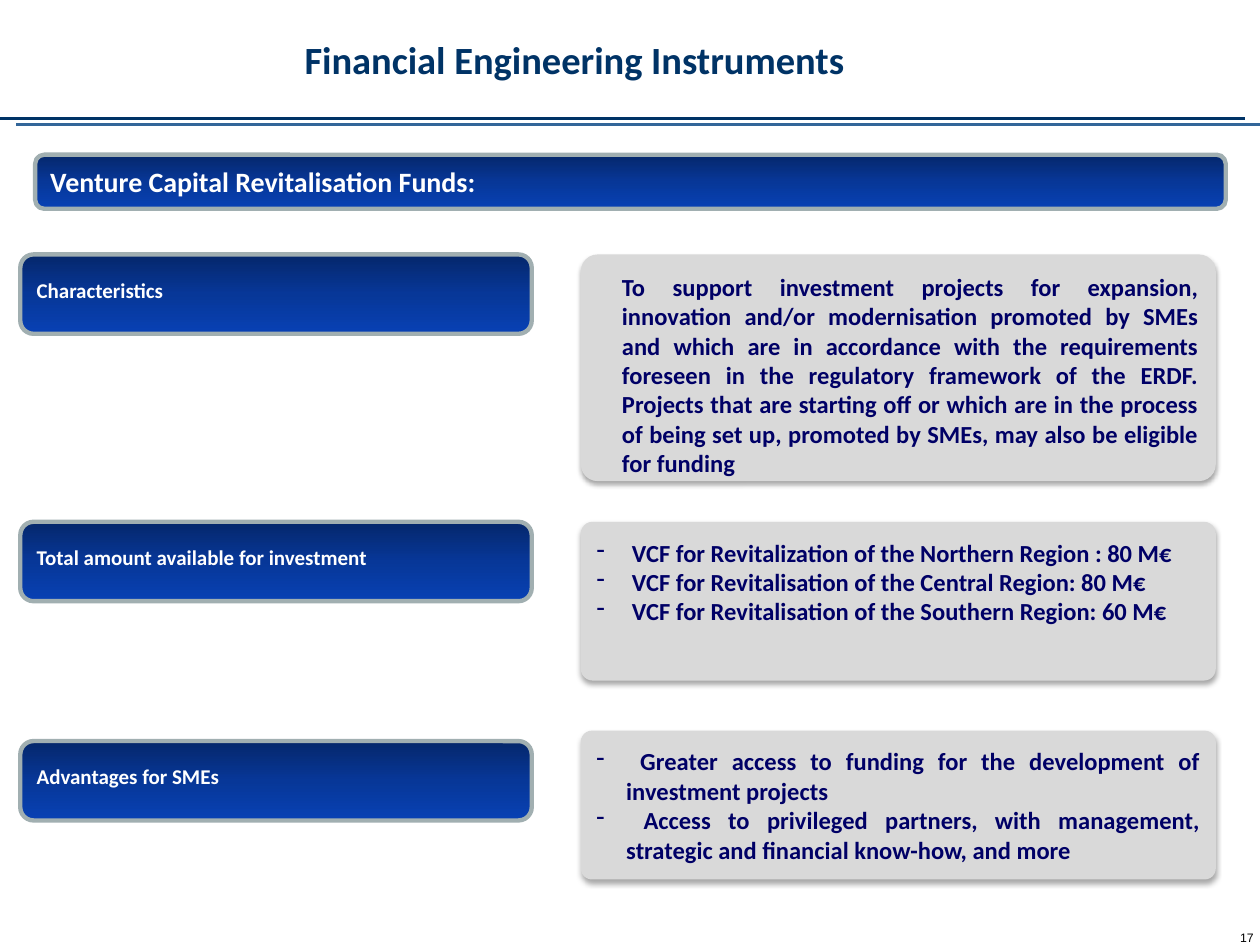
from copy import deepcopy

from lxml.etree import SubElement
from pptx import Presentation
from pptx.dml.color import RGBColor
from pptx.enum.shapes import MSO_CONNECTOR, MSO_SHAPE
from pptx.enum.text import MSO_ANCHOR, PP_ALIGN
from pptx.oxml.ns import qn
from pptx.util import Cm, Pt

NAVY, INK, WHITE = "003366", "000066", "FFFFFF"
BLUES = ["05276B", "073798", "0841B4"]
LEFT, LABEL_W, LABEL_H = 0.41, 10.31, 1.6
RIGHT, PANEL_W = 11.71, 12.8

# label, label top, panel top, panel height, bulleted, paragraphs of runs
ROWS = [
    ("Characteristics", 5.13, 5.13, 4.57, False, [[
        "To support investment projects for expansion, innovation and/or "
        "modernisation promoted by SMEs and which are in accordance with the "
        "requirements foreseen in the regulatory framework of the ERDF. "
        "Projects that are starting off or which are in the process of being "
        "set up, promoted by SMEs, may also be eligible for funding"]]),
    ("Total amount available for investment", 10.52, 10.52, 3.2, True, [
        [" VCF for Revitalization of the Northern Region", " ", ": 80 M€"],
        [" VCF for Revitalisation of the Central Region: 80 M€"],
        [" VCF for Revitalisation of the Southern Region: 60 M€"]]),
    ("Advantages for SMEs", 14.94, 14.73, 3.0, True, [
        [" Greater access to funding for the development of investment projects"],
        [" Access to privileged partners, with management, strategic and "
         "financial know-how, and more"]]),
]


def rgb(code):
    return RGBColor.from_string(code)


def style(run, size, color, bold=True, name="Calibri"):
    font = run.font
    font.size, font.bold, font.name = Pt(size), bold, name
    font.color.rgb = rgb(color)


def place(box):
    return [Cm(v) for v in box]


def add_text(slide, box, text, size, color, **look):
    shape = slide.shapes.add_textbox(*place(box))
    frame = shape.text_frame
    frame.word_wrap = True
    frame.text = text
    style(frame.paragraphs[0].runs[0], size, color, **look)
    return frame


def add_rule(slide, x, y, width, color):
    line = slide.shapes.add_connector(
        MSO_CONNECTOR.STRAIGHT, *place((x, y, x + width, y)))
    line.line.color.rgb = rgb(color)
    line.line.width = Pt(1.5)
    SubElement(line._element.spPr, qn("a:effectLst"))


def add_round(slide, box):
    shape = slide.shapes.add_shape(MSO_SHAPE.ROUNDED_RECTANGLE, *place(box))
    shape.shadow.inherit = False
    return shape


def add_blue(slide, box, text, size):
    """Rounded bar with a vertical blue gradient."""
    shape = add_round(slide, box)
    fill = shape.fill
    fill.gradient()
    fill.gradient_angle = 270
    stops = shape._element.spPr.find(qn("a:gradFill")).find(qn("a:gsLst"))
    stops.append(deepcopy(stops[-1]))
    for i, (stop, color) in enumerate(zip(fill.gradient_stops, BLUES)):
        stop.position = i / 2
        stop.color.rgb = rgb(color)
    shape.line.color.rgb = rgb("A1AFB1")
    shape.line.width = Pt(2.5)
    frame = shape.text_frame
    frame.text = text
    para = frame.paragraphs[0]
    para.alignment = PP_ALIGN.LEFT
    style(para.runs[0], size, WHITE)
    return frame


def add_label(slide, box, text):
    frame = add_blue(slide, box, text, 12)
    frame.vertical_anchor = MSO_ANCHOR.TOP
    frame.word_wrap = False
    para = frame.paragraphs[0]
    para.alignment = PP_ALIGN.JUSTIFY
    para.line_spacing = 1.5


def add_shadow(shape):
    effects = shape._element.spPr.find(qn("a:effectLst"))
    outer = SubElement(effects, qn("a:outerShdw"), blurRad=str(Pt(3.1)),
                       dist=str(Pt(1.8)), dir="5400000", rotWithShape="0")
    color = SubElement(outer, qn("a:srgbClr"), val="000000")
    SubElement(color, qn("a:alpha"), val="35000")


def indent(para, bulleted):
    props = para._p.get_or_add_pPr()
    props.set("marL", str(Cm(0.6 if bulleted else 0.48)))
    props.set("indent", str(Cm(-0.6 if bulleted else 0)))
    if bulleted:
        color = SubElement(props, qn("a:buClr"))
        SubElement(color, qn("a:srgbClr"), val=INK)
        SubElement(props, qn("a:buChar"), char="-")


def add_panel(slide, box, bulleted, paras):
    """Grey card with justified text."""
    shape = add_round(slide, box)
    shape.adjustments[0] = 0.074
    shape.fill.solid()
    shape.fill.fore_color.rgb = rgb("D9D9D9")
    shape.line.fill.background()
    add_shadow(shape)
    frame = shape.text_frame
    frame.vertical_anchor = MSO_ANCHOR.TOP
    frame.margin_left = frame.margin_right = Cm(0.25)
    frame.margin_top = frame.margin_bottom = Cm(0.25)
    frame.text = "\n".join("" for _ in paras)
    for para, parts in zip(frame.paragraphs, paras):
        para.alignment = PP_ALIGN.JUSTIFY
        indent(para, bulleted)
        for part in parts:
            run = para.add_run()
            run.text = part
            if part == " ":
                style(run, 10, INK, bold=False, name="Arial")
            else:
                style(run, 14, INK)


def add_head(slide, box):
    """Title over two offset rules."""
    x, y, width, height = box
    add_rule(slide, x, y + height, width, NAVY)
    add_rule(slide, x + 0.33, y + height + 0.12, width, "336699")
    title = add_text(slide, (x + 5.89, y + 0.13, 19.51, 2.13),
                     "Financial Engineering Instruments", 22, NAVY)
    title.vertical_anchor = MSO_ANCHOR.MIDDLE


def add_number(slide, box):
    frame = add_text(slide, box, "17", 7, "000000", bold=False, name="Arial")
    frame.margin_left = frame.margin_right = 0
    frame.margin_top = frame.margin_bottom = 0
    frame.paragraphs[0].alignment = PP_ALIGN.RIGHT


def main():
    deck = Presentation()
    deck.slide_width, deck.slide_height = Cm(25.4), Cm(19.05)
    slide = deck.slides.add_slide(deck.slide_layouts[6])

    # Heading and banner
    add_head(slide, (0, 0, 25.1, 2.39))
    add_blue(slide, (0.71, 3.12, 24, 1.09),
             "Venture Capital Revitalisation Funds:", 16)

    # Labels with their panels
    for text, top, start, height, bulleted, paras in ROWS:
        add_panel(slide, (RIGHT, start, PANEL_W, height), bulleted, paras)
        add_label(slide, (LEFT, top, LABEL_W, LABEL_H), text)

    # Page number
    add_number(slide, (24.28, 18.75, 0.99, 0.3))
    deck.save("out.pptx")


if __name__ == "__main__":
    main()
